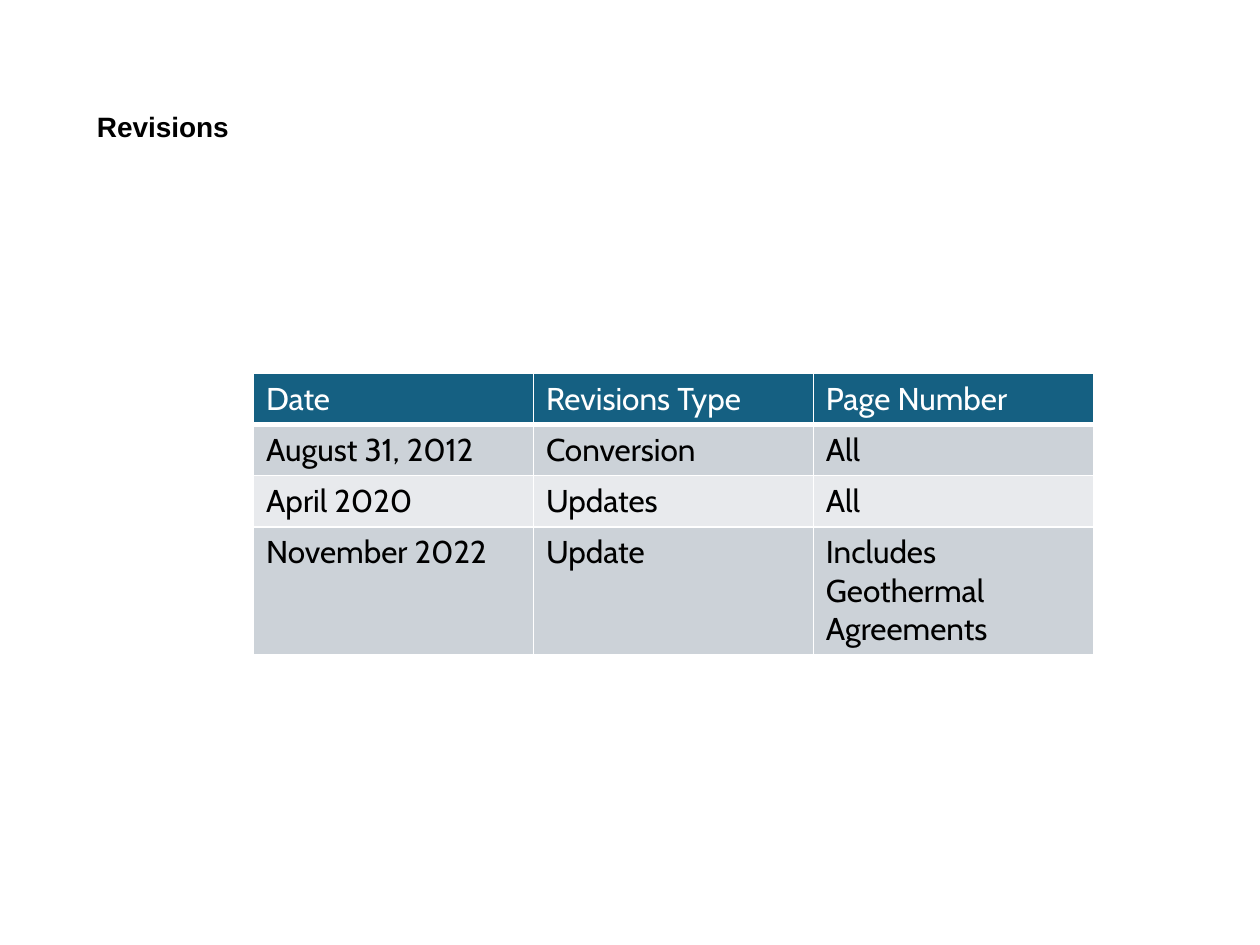
import dataclasses

import pptx
import pptx.dml.color
import pptx.enum.text
import pptx.oxml
import pptx.oxml.ns
import pptx.util
from pptx.util import Cm


@dataclasses.dataclass(frozen=True)
class Theme:
    head: str = "156082"
    bands: tuple = ("CCD2D8", "E8EAED")
    white: str = "FFFFFF"
    black: str = "000000"
    title_font: str = "Arial"
    body_font: str = "Cabin"
    title_size: int = 16
    body_size: int = 18
    thin: int = 1
    thick: int = 3


THEME = Theme()

ROWS = (
    ("Date", "Revisions Type", "Page Number"),
    ("August 31, 2012", "Conversion", "All"),
    ("April 2020", "Updates", "All"),
    ("November 2022", "Update", "Includes Geothermal Agreements"),
)


def rgb(color):
    return pptx.dml.color.RGBColor.from_string(color)


def set_font(para, name, size, color, bold=False):
    font = para.font
    font.name, font.size, font.bold = name, pptx.util.Pt(size), bold
    font.color.rgb = rgb(color)


def add_title(slide, text):
    title = slide.shapes.title
    title.left, title.top = Cm(1.7), Cm(1.47)
    title.width, title.height = Cm(3.38), Cm(2.24)
    frame = title.text_frame
    frame.text = text
    frame.vertical_anchor = pptx.enum.text.MSO_ANCHOR.MIDDLE
    para = frame.paragraphs[0]
    para.alignment = pptx.enum.text.PP_ALIGN.LEFT
    para.line_spacing = 0.9
    set_font(para, THEME.title_font, THEME.title_size, THEME.black, True)


def add_edge(cell, side, width):
    line = pptx.oxml.parse_xml(
        f'<a:ln{side} {pptx.oxml.ns.nsdecls("a")} w="{pptx.util.Pt(width)}">'
        f'<a:solidFill><a:srgbClr val="{THEME.white}"/></a:solidFill>'
        f"</a:ln{side}>"
    )
    cell._tc.get_or_add_tcPr().append(line)


def fill_cell(cell, text, row):
    head = row == 0
    # Borders come before the fill in the cell properties
    for side in "LRTB":
        add_edge(cell, side, THEME.thick if head and side == "B" else THEME.thin)
    cell.fill.solid()
    cell.fill.fore_color.rgb = rgb(THEME.head if head else THEME.bands[(row - 1) % 2])
    cell.text = text
    set_font(cell.text_frame.paragraphs[0], THEME.body_font, THEME.body_size,
             THEME.white if head else THEME.black)


def add_grid(slide, rows):
    high = Cm(1.03)
    table = slide.shapes.add_table(
        len(rows), len(rows[0]), Cm(5.11), Cm(7.53), Cm(16.93), high * len(rows)
    ).table
    for r, texts in enumerate(rows):
        table.rows[r].height = high
        for c, text in enumerate(texts):
            fill_cell(table.cell(r, c), text, r)


def main():
    deck = pptx.Presentation()
    deck.slide_width, deck.slide_height = Cm(25.4), Cm(19.05)
    slide = deck.slides.add_slide(deck.slide_layouts.get_by_name("Title Only"))

    # Heading
    add_title(slide, "Revisions")

    # Revision history
    add_grid(slide, ROWS)

    deck.save("out.pptx")


if __name__ == "__main__":
    main()
